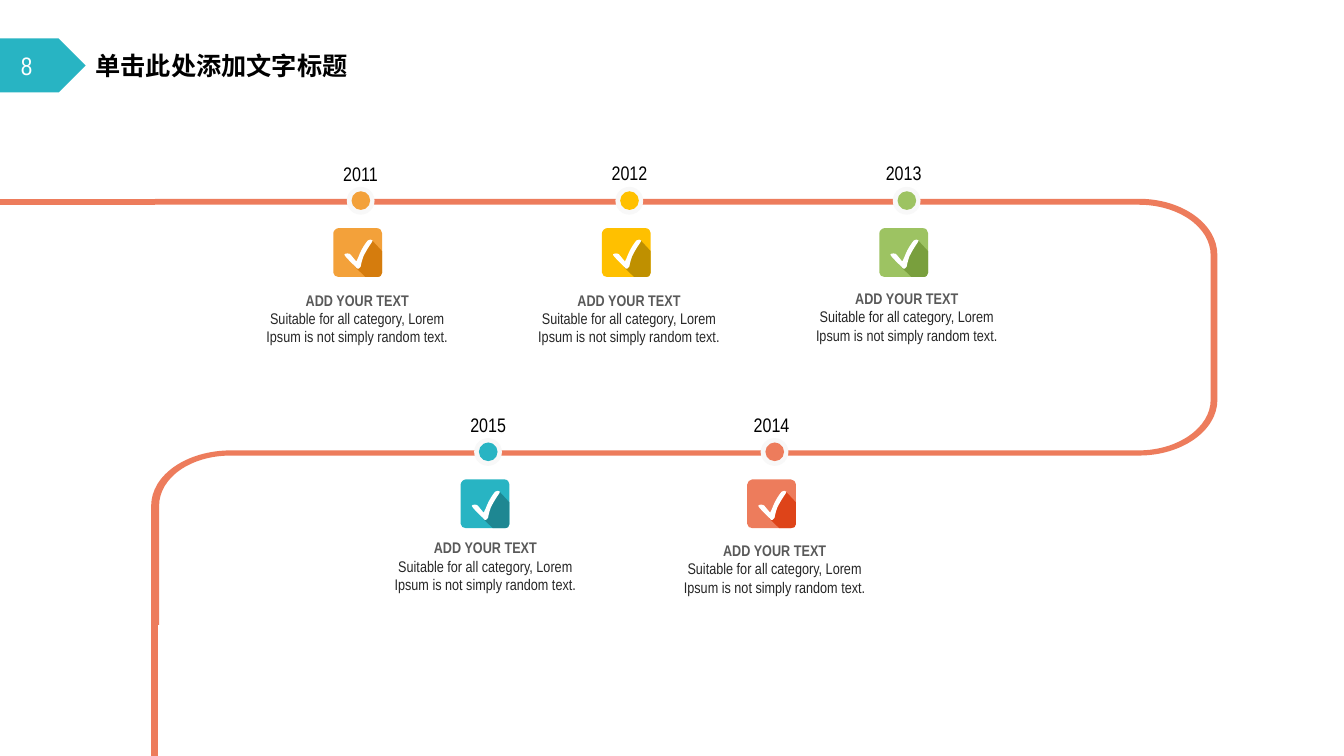
from pptx import Presentation
from pptx.dml.color import RGBColor
from pptx.enum.shapes import MSO_CONNECTOR, MSO_SHAPE
from pptx.enum.text import MSO_AUTO_SIZE, PP_ALIGN
from pptx.util import Cm, Pt
from lxml import etree

ORANGE = RGBColor(0xF3, 0xA1, 0x3A)
RUST = RGBColor(0xD5, 0x7C, 0x0D)
GOLD = RGBColor(0xFF, 0xC0, 0x00)
OCHRE = RGBColor(0xBF, 0x90, 0x00)
GREEN = RGBColor(0x9D, 0xC3, 0x62)
MOSS = RGBColor(0x79, 0x9F, 0x3D)
CORAL = RGBColor(0xED, 0x7C, 0x5C)
RED = RGBColor(0xDE, 0x44, 0x19)
TEAL = RGBColor(0x28, 0xB4, 0xC3)
PINE = RGBColor(0x1E, 0x87, 0x92)
PALE = RGBColor(0xF8, 0xF8, 0xF8)
WHITE = RGBColor(0xFF, 0xFF, 0xFF)
BLACK = RGBColor(0, 0, 0)
GREY = RGBColor(0x59, 0x59, 0x59)
INK = RGBColor(0x26, 0x26, 0x26)
DRAW = "{http://schemas.openxmlformats.org/drawingml/2006/main}"

# Outlines in cm: two numbers are a corner, six are a Bezier curve
TRACK = [(4.01, 15.75), (3.81, 15.75), (3.81, 12.75),
         (3.81, 11.96, 4.72, 11.35, 5.82, 11.35), (28.7, 11.35),
         (29.69, 11.35, 30.51, 10.77, 30.51, 10.08), (30.51, 6.43),
         (30.51, 5.72, 29.69, 5.16, 28.7, 5.16), (3.91, 5.16),
         (3.91, 5.01), (28.7, 5.01),
         (29.79, 5.01, 30.68, 5.64, 30.68, 6.43), (30.68, 10.08),
         (30.68, 10.85, 29.79, 11.48, 28.7, 11.48), (5.82, 11.48),
         (4.8, 11.48, 4.01, 12.04, 4.01, 12.75)]
TILE = [(1.23, 1.12), (1.23, 1.19, 1.18, 1.23, 1.1, 1.23), (0.13, 1.23),
        (0.07, 1.23, 0, 1.19, 0, 1.12), (0, 0.13),
        (0, 0.07, 0.07, 0, 0.13, 0), (1.1, 0),
        (1.18, 0, 1.23, 0.07, 1.23, 0.13)]
SHADE = [(0.97, 0.3), (0.56, 0.99), (0.81, 1.23), (1.1, 1.23),
         (1.18, 1.23, 1.23, 1.19, 1.23, 1.12), (1.23, 0.58)]
TICK = [(0.61, 1.02), (0.6, 1.02, 0.57, 0.99, 0.56, 0.97),
        (0.56, 0.97, 0.26, 0.69, 0.28, 0.66),
        (0.3, 0.63, 0.41, 0.63, 0.43, 0.66), (0.58, 0.84),
        (0.61, 0.79, 0.64, 0.71, 0.66, 0.66),
        (0.71, 0.53, 0.81, 0.38, 0.87, 0.31),
        (0.91, 0.28, 0.97, 0.28, 0.99, 0.31),
        (1, 0.33, 0.87, 0.48, 0.76, 0.71),
        (0.71, 0.84, 0.69, 0.97, 0.69, 0.97),
        (0.67, 0.97, 0.66, 1.02, 0.64, 1.02)]

# Year, its left and top, icon left and top, note left and top, light and dark colour
STOPS = [("2011", 7.83, 3.96, 8.4, 5.75, 6.34, 7.06, ORANGE, RUST),
         ("2012", 14.61, 3.94, 15.17, 5.75, 13.19, 7.06, GOLD, OCHRE),
         ("2013", 21.52, 3.94, 22.16, 5.75, 20.19, 7.01, GREEN, MOSS),
         ("2014", 18.19, 10.29, 18.83, 12.08, 16.86, 13.37, CORAL, RED),
         ("2015", 11.05, 10.29, 11.61, 12.08, 9.57, 13.3, TEAL, PINE)]
HEAD = "ADD YOUR TEXT"
BODY = "Suitable for all category, Lorem Ipsum is not simply random text."

deck = Presentation()
deck.slide_width, deck.slide_height = Cm(33.87), Cm(19.05)
slide = deck.slides.add_slide(deck.slide_layouts[6])
shapes = slide.shapes


def paint(shape, color):
    shape.shadow.inherit = False
    shape.fill.solid()
    shape.fill.fore_color.rgb = color
    shape.line.fill.background()


def trace(parts, left, top, color):
    dots = [(Cm(left + part[-2]), Cm(top + part[-1])) for part in parts]
    pen = shapes.build_freeform(*dots[0], scale=1.0)
    pen.add_line_segments(dots[1:], close=True)
    shape = pen.convert_to_shape()
    paint(shape, color)
    # Turn the six-number parts into true curves
    nodes = list(shape._element.iter(DRAW + "lnTo"))
    for node, part in zip(nodes, parts[1:]):
        if len(part) == 6:
            node.tag = DRAW + "cubicBezTo"
            for i in (0, 1):
                x = Cm(left + part[2 * i]) - shape.left
                y = Cm(top + part[2 * i + 1]) - shape.top
                node.insert(i, etree.Element(DRAW + "pt", x=str(x), y=str(y)))


# Title flag
flag = shapes.add_shape(MSO_SHAPE.PENTAGON, 0, Cm(0.97), Cm(2.16), Cm(1.36))
paint(flag, TEAL)

# Text boxes: place, alignment, paragraphs of words, size, bold, colour, spacing
texts = [((0.28, 1.14, 1.27, 1.02), PP_ALIGN.LEFT, [("8", 18, False, WHITE, 1.0)]),
         ((2.16, 1.14, 7.47, 1.02), PP_ALIGN.LEFT,
          [("单击此处添加文字标题", 18, True, BLACK, 1.0)])]

# Winding track
trace(TRACK, 0, 0, CORAL)

# Stops: tick icon and dot on the track
for year, mark, high, left, top, side, low, light, dark in STOPS:
    for parts, color in [(TILE, light), (SHADE, dark), (TICK, WHITE)]:
        trace(parts, left, top, color)
    for shift, rise, size, color in [(0.34, 1.04, 0.7, PALE), (0.46, 0.93, 0.47, light)]:
        dot = shapes.add_shape(MSO_SHAPE.OVAL, Cm(left + shift), Cm(top - rise),
                               Cm(size), Cm(size))
        paint(dot, color)
    texts += [((side, low, 5.33, 1.8), PP_ALIGN.CENTER,
               [(HEAD, 11, True, GREY, 1.3), (BODY, 11, False, INK, 1.0)]),
              ((mark, high, 2.51, 0.86), PP_ALIGN.CENTER,
               [(year, 14, False, BLACK, 1.0)])]

# Write all text
for place, align, lines in texts:
    frame = shapes.add_textbox(*map(Cm, place)).text_frame
    frame.word_wrap = True
    frame.auto_size = MSO_AUTO_SIZE.SHAPE_TO_FIT_TEXT
    for i, (words, size, bold, color, gap) in enumerate(lines):
        para = frame.add_paragraph() if i else frame.paragraphs[0]
        para.alignment, para.line_spacing = align, gap
        run = para.add_run()
        run.text = words
        style = {"name": "Arial Narrow", "size": Pt(size), "bold": bold}
        for key, value in style.items():
            setattr(run.font, key, value)
        run.font.color.rgb = color

# Straight ends of the track
for x1, y1, x2, y2, width in [(3.89, 15.47, 3.89, 19.05, 5.25),
                              (3.91, 5.08, 0, 5.08, 4.25)]:
    line = shapes.add_connector(MSO_CONNECTOR.STRAIGHT, Cm(x1), Cm(y1), Cm(x2), Cm(y2))
    line.line.color.rgb = CORAL
    line.line.width = Pt(width)
    etree.SubElement(line._element.spPr, DRAW + "effectLst")

deck.save("out.pptx")
